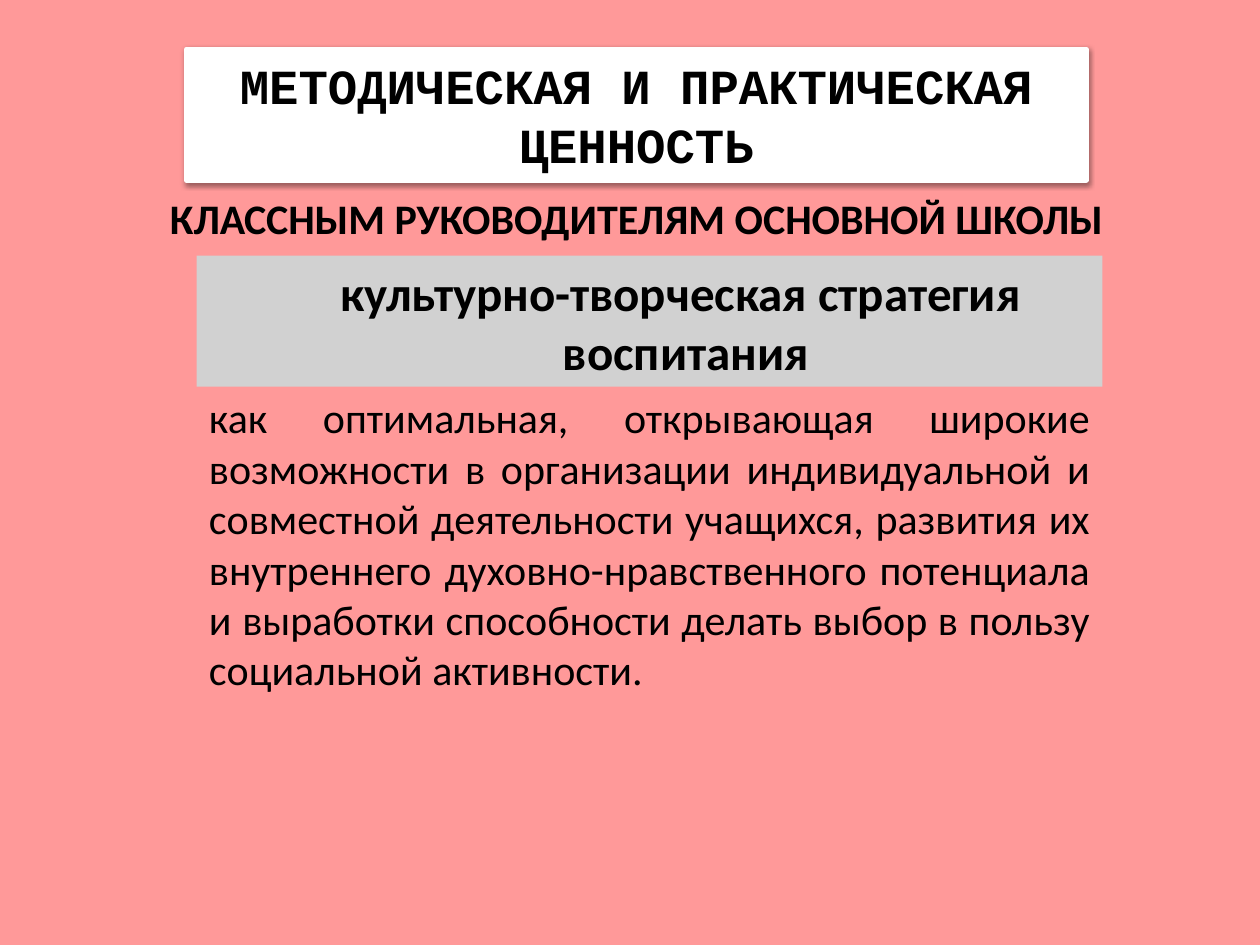
from lxml import etree
from pptx import Presentation
from pptx.dml.color import RGBColor
from pptx.enum.shapes import MSO_SHAPE
from pptx.enum.text import MSO_ANCHOR, MSO_AUTO_SIZE, PP_ALIGN
from pptx.oxml.ns import qn
from pptx.util import Inches, Pt

RECT = MSO_SHAPE.RECTANGLE
TOP, MIDDLE = MSO_ANCHOR.TOP, MSO_ANCHOR.MIDDLE
CENTER, JUSTIFY = PP_ALIGN.CENTER, PP_ALIGN.JUSTIFY
FIXED = MSO_AUTO_SIZE.NONE
PINK = RGBColor(0xFF, 0x99, 0x99)
GRAY = RGBColor(0xD1, 0xD1, 0xD1)
WHITE = RGBColor(0xFF, 0xFF, 0xFF)
BLACK = RGBColor(0, 0, 0)


def write(shape, text, font="Calibri", size=24, bold=False, align=CENTER,
          anchor=MIDDLE, indent=0):
    """Fill the shape with text, one paragraph to a line."""
    frame = shape.text_frame
    frame.word_wrap = True
    frame.auto_size = FIXED
    frame.vertical_anchor = anchor
    frame.text = text
    for par in frame.paragraphs:
        par.alignment = align
        par.font.name = font
        par.font.size = Pt(size)
        par.font.bold = bold
        par.font.color.rgb = BLACK
        if indent:
            props = par._p.get_or_add_pPr()
            props.set("marL", "0")
            props.set("indent", str(Inches(indent)))


def shade(shape, blur, dist, angle, alpha):
    """Add an outer shadow: points, points, degrees, percent."""
    effects = etree.SubElement(shape._element.spPr, qn("a:effectLst"))
    outer = etree.SubElement(
        effects, qn("a:outerShdw"), blurRad=str(Pt(blur)), dist=str(Pt(dist)),
        dir=str(angle * 60000), rotWithShape="0")
    color = etree.SubElement(outer, qn("a:srgbClr"), val=str(BLACK))
    etree.SubElement(color, qn("a:alpha"), val=str(alpha * 1000))


class Deck:
    def __init__(self, wide, high, back):
        self.file = Presentation()
        self.file.slide_width = Inches(wide)
        self.file.slide_height = Inches(high)
        self.slide = self.file.slides.add_slide(self.file.slide_layouts[5])
        fill = self.slide.background.fill
        fill.solid()
        fill.fore_color.rgb = back

    def title(self, text, box, **style):
        shape = self.slide.shapes.title
        shape.left, shape.top, shape.width, shape.height = map(Inches, box)
        shape.fill.solid()
        shape.fill.fore_color.rgb = WHITE
        shape.line.color.rgb = WHITE
        shape.line.width = Pt(3)
        shade(shape, blur=3.1, dist=1.6, angle=90, alpha=38)
        write(shape, text, **style)

    def text(self, text, box, **style):
        write(self.slide.shapes.add_textbox(*map(Inches, box)), text, **style)

    def panel(self, text, box, color, **style):
        shape = self.slide.shapes.add_shape(RECT, *map(Inches, box))
        shape.shadow.inherit = False
        shape.fill.solid()
        shape.fill.fore_color.rgb = color
        shape.line.fill.background()
        write(shape, text, **style)


def main():
    deck = Deck(10, 7.5, PINK)
    deck.title("МЕТОДИЧЕСКАЯ И ПРАКТИЧЕСКАЯ ЦЕННОСТЬ", (1.48, 0.39, 7.14, 1.04),
               font="Courier New", size=28, bold=True, anchor=TOP)
    deck.text("КЛАССНЫМ РУКОВОДИТЕЛЯМ ОСНОВНОЙ ШКОЛЫ", (0.76, 1.48, 8.49, 0.5),
              bold=True, align=JUSTIFY, indent=0.49)
    deck.panel("культурно-творческая стратегия\n воспитания",
               (1.56, 2.03, 7.19, 1.04), GRAY, size=28, bold=True, indent=0.49)
    deck.text("как оптимальная, открывающая широкие возможности в организации "
              "индивидуальной и совместной деятельности учащихся, развития их "
              "внутреннего духовно-нравственного потенциала и выработки "
              "способности делать выбор в пользу социальной активности.",
              (1.56, 3.05, 7.19, 2.52), align=JUSTIFY)
    deck.file.save("out.pptx")


if __name__ == "__main__":
    main()
